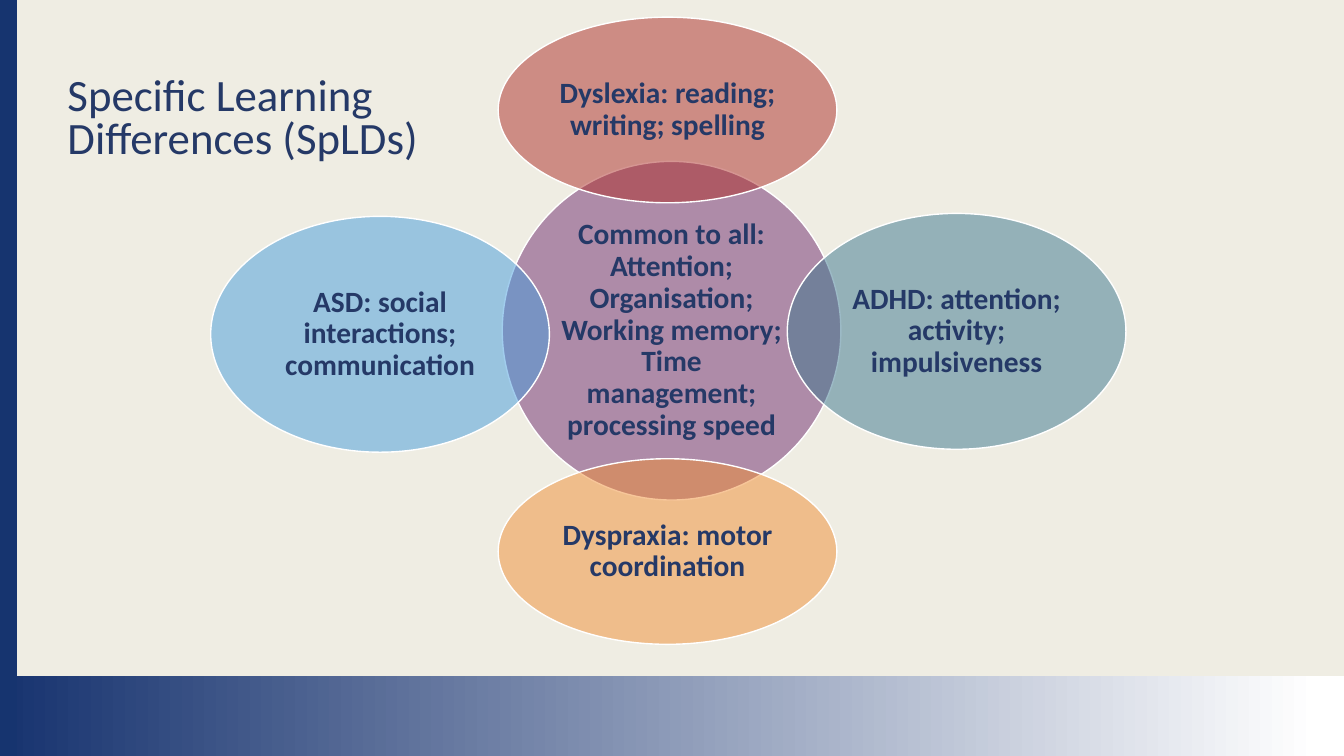
from dataclasses import dataclass

from lxml.etree import SubElement
from pptx import Presentation
from pptx.dml.color import RGBColor as Rgb
from pptx.enum.shapes import MSO_SHAPE as Shape
from pptx.enum.text import MSO_ANCHOR as Anchor, MSO_AUTO_SIZE as Fit, PP_ALIGN as Align
from pptx.oxml.ns import qn
from pptx.util import Inches, Pt


@dataclass(frozen=True)
class Theme:
    font: str = "Calibri"
    paper: str = "EFEDE3"
    ink: str = "253967"
    side: str = "16346F"
    base: str = "17336F"
    white: str = "FFFFFF"
    plum: str = "6F2A6E"
    red: str = "AD2D27"
    teal: str = "3B768E"
    orange: str = "F08E34"
    blue: str = "459CDD"
    title: int = 32
    body: int = 21


def write(frame, text, *, theme, size, bold=False, align=Align.LEFT, space=0.9):
    frame.word_wrap = True
    para = frame.paragraphs[0]
    para.text = text
    para.alignment = align
    para.line_spacing = space
    font = para.runs[0].font
    font.name, font.size, font.bold = theme.font, Pt(size), bold
    font.color.rgb = Rgb.from_string(theme.ink)


class Board:
    """Places elements by percent shares of the slide's width and height."""

    def __init__(self, deck, theme):
        self.deck, self.theme = deck, theme
        self.slide = deck.slides.add_slide(deck.slide_layouts[6])
        fill = self.slide.background.fill
        fill.solid()
        fill.fore_color.rgb = Rgb.from_string(theme.paper)

    def area(self, left, top, width, height):
        across, down = self.deck.slide_width / 100, self.deck.slide_height / 100
        return [round(n) for n in (left * across, top * down, width * across, height * down)]

    def shape(self, kind, area, color):
        item = self.slide.shapes.add_shape(kind, *self.area(*area))
        item.shadow.inherit = False
        item.fill.solid()
        item.fill.fore_color.rgb = Rgb.from_string(color)
        item.line.fill.background()
        return item

    def fade(self, area, start, end, stop):
        band = self.shape(Shape.RECTANGLE, area, start)
        band.fill.gradient()
        band.fill.gradient_angle = 0
        first, last = band.fill.gradient_stops
        first.color.rgb, last.color.rgb = Rgb.from_string(start), Rgb.from_string(end)
        first.position, last.position = 0, stop

    def oval(self, text, mid, size, color):
        area = (mid[0] - size[0] / 2, mid[1] - size[1] / 2, *size)
        item = self.shape(Shape.OVAL, area, color)
        item.line.color.rgb = Rgb.from_string(self.theme.white)
        item.line.width = Pt(1)
        # Half transparent fill
        tint = next(item.fill._xPr.iter(qn("a:solidFill")))[0]
        SubElement(tint, qn("a:alpha")).set("val", "50000")
        frame = item.text_frame
        frame.vertical_anchor = Anchor.MIDDLE
        frame.margin_left = frame.margin_right = Inches(0.03)
        frame.margin_top = frame.margin_bottom = Inches(0.03)
        write(frame, text, theme=self.theme, size=self.theme.body, bold=True, align=Align.CENTER)

    def title(self, text, area):
        frame = self.slide.shapes.add_textbox(*self.area(*area)).text_frame
        write(frame, text, theme=self.theme, size=self.theme.title, space=0.8)
        frame.auto_size = Fit.SHAPE_TO_FIT_TEXT


def main():
    deck = Presentation()
    deck.slide_width, deck.slide_height = Inches(13.33), Inches(7.5)
    theme = Theme()
    board = Board(deck, theme)

    # Bands along the foot and the left edge
    board.fade((0, 89.4, 100, 10.6), theme.base, theme.white, 0.98)
    board.shape(Shape.RECTANGLE, (0, 0, 1.27, 100), theme.side)

    # Common core with the four differences around it
    wide = 25.2
    core, flat, tall = (wide, 44.8), (wide, 24.55), (wide, 31.2)
    ovals = [
        ("Common to all: Attention; Organisation; Working memory; Time management; "
         "processing speed", (49.97, 43.75), core, theme.plum),
        ("Dyslexia: reading; writing; spelling", (49.67, 14.55), flat, theme.red),
        ("ADHD: attention; activity; impulsiveness", (71.18, 43.83), tall, theme.teal),
        ("Dyspraxia: motor coordination", (49.67, 72.95), flat, theme.orange),
        ("ASD: social interactions; communication", (28.28, 44.22), tall, theme.blue),
    ]
    for text, mid, size, color in ovals:
        board.oval(text, mid, size, color)

    # Heading
    board.title("Specific Learning Differences (SpLDs)", (4.28, 9.6, 32.78, 12.93))
    deck.save("out.pptx")


if __name__ == "__main__":
    main()
